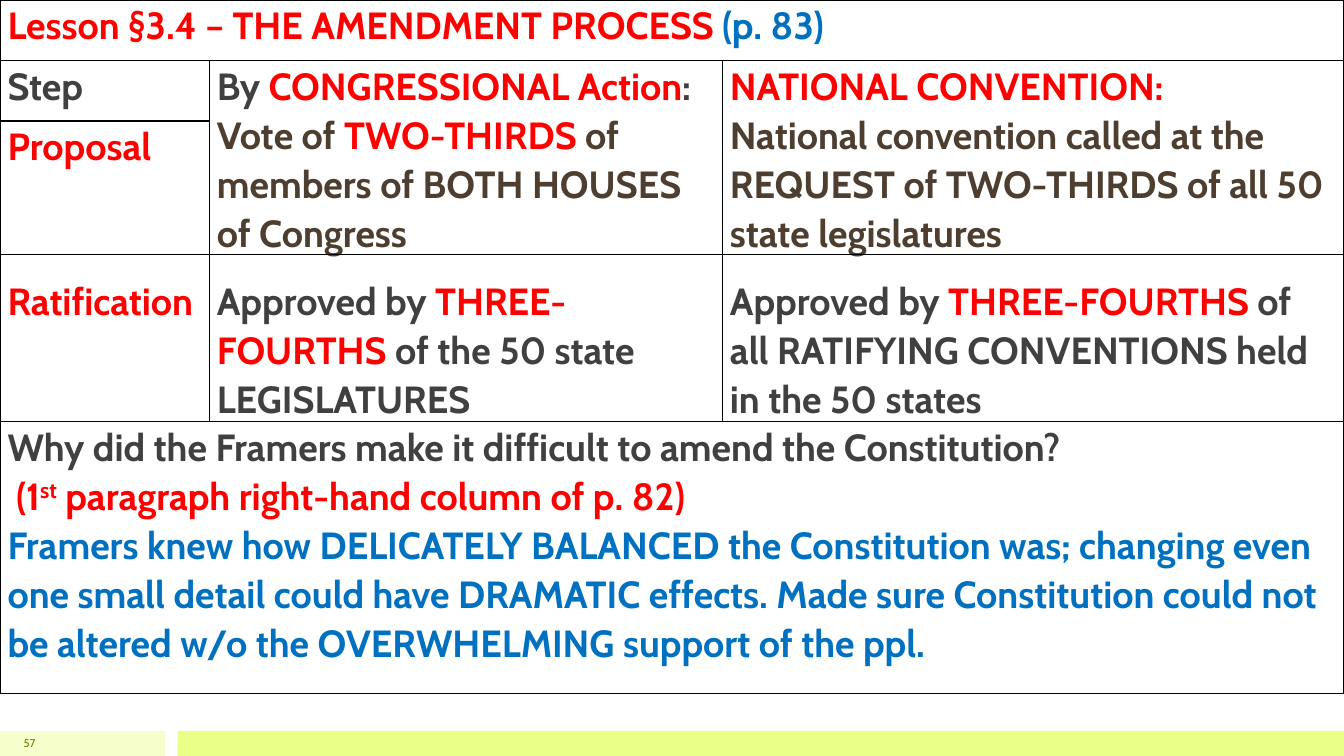
from dataclasses import dataclass

from lxml.etree import SubElement
from pptx import Presentation
from pptx.dml.color import RGBColor
from pptx.enum.shapes import MSO_SHAPE
from pptx.enum.text import MSO_ANCHOR, PP_ALIGN
from pptx.oxml.ns import qn
from pptx.util import Pt


@dataclass(frozen=True)
class Theme:
    font: str = "Cabin"
    table_size: float = 27
    number_size: float = 8
    line_spacing: float = 1.07
    red: str = "FF0000"
    blue: str = "0070C0"
    gray: str = "404040"
    brown: str = "4D3E2F"
    olive: str = "688000"
    pale_lime: str = "F6FFCC"
    lime: str = "E9FF88"
    border: str = "000000"


THEME = Theme()
RED, BLUE, GRAY, BROWN = THEME.red, THEME.blue, THEME.gray, THEME.brown

SLIDE_WIDTH, SLIDE_HEIGHT = 960, 540
FOOTER_TOP, FOOTER_HEIGHT = 522, 18
COLUMN_WIDTHS = [149.5, 366.5, 444]
ROW_HEIGHTS = [43.2, 43.2, 90, 114.5, 194.4]
MERGES = [((0, 0), (0, 2)), ((1, 1), (2, 1)), ((1, 2), (2, 2)), ((4, 0), (4, 2))]
RATIFICATION_ROW, RATIFICATION_GAP = 3, 15

# (row, column): paragraphs, each a list of (text, colour[, baseline]) runs
CELLS = {
    (0, 0): [[("Lesson §3.4 – THE AMENDMENT PROCESS ", RED), ("(p. 83)", BLUE)]],
    (1, 0): [[("Step", GRAY)]],
    (1, 1): [
        [("By ", GRAY), ("CONGRESSIONAL Action", RED), (":", GRAY)],
        [("Vote of ", BROWN), ("TWO-THIRDS ", RED),
         ("of members of BOTH HOUSES of Congress", BROWN)],
    ],
    (1, 2): [
        [("NATIONAL CONVENTION:", RED)],
        [("National convention called at the REQUEST of TWO-THIRDS "
          "of all 50 state legislatures", BROWN)],
    ],
    (2, 0): [[("Proposal", RED)]],
    (3, 0): [[("Ratification", RED)]],
    (3, 1): [[("Approved by ", GRAY), ("THREE-FOURTHS ", RED),
              ("of the 50 state LEGISLATURES", GRAY)]],
    (3, 2): [[("Approved by ", GRAY), ("THREE-FOURTHS ", RED),
              ("of all RATIFYING CONVENTIONS held in the 50 states", GRAY)]],
    (4, 0): [
        [("Why did the Framers make it difficult to amend the Constitution?", GRAY)],
        [(" (1", RED), ("st", RED, 30), (" paragraph right-hand column of p. 82)", RED)],
        [("Framers knew how DELICATELY BALANCED the Constitution was; changing even "
          "one small detail could have DRAMATIC effects. Made sure Constitution could "
          "not be altered w/o the OVERWHELMING support of the ppl.", BLUE)],
    ],
}


class SlideBuilder:
    def __init__(self, slide, theme):
        self.slide = slide
        self.theme = theme

    def add_run(self, paragraph, text, color, size, bold=False, baseline=0):
        """Add a styled run; baseline is the percentage it is raised by."""
        run = paragraph.add_run()
        run.text = text
        run.font.name = self.theme.font
        run.font.size = Pt(size)
        run.font.bold = bold
        run.font.color.rgb = RGBColor.from_string(color)
        if baseline:
            run._r.get_or_add_rPr().set("baseline", str(baseline * 1000))

    def add_bar(self, left, width, color):
        bar = self.slide.shapes.add_shape(
            MSO_SHAPE.RECTANGLE, Pt(left), Pt(FOOTER_TOP), Pt(width), Pt(FOOTER_HEIGHT))
        bar.shadow.inherit = False
        bar.fill.solid()
        bar.fill.fore_color.rgb = RGBColor.from_string(color)
        bar.line.fill.background()

    def add_page_number(self, text):
        box = self.slide.shapes.add_textbox(
            Pt(0), Pt(FOOTER_TOP), Pt(32.4), Pt(FOOTER_HEIGHT))
        frame = box.text_frame
        frame.word_wrap = True
        frame.vertical_anchor = MSO_ANCHOR.MIDDLE
        paragraph = frame.paragraphs[0]
        paragraph.alignment = PP_ALIGN.RIGHT
        self.add_run(paragraph, text, self.theme.olive, self.theme.number_size)

    def add_borders(self, cell):
        properties = cell._tc.get_or_add_tcPr()
        for position, side in enumerate(("lnL", "lnR", "lnT", "lnB")):
            line = SubElement(properties, qn(f"a:{side}"), w=str(Pt(1)))
            fill = SubElement(line, qn("a:solidFill"))
            SubElement(fill, qn("a:srgbClr"), val=self.theme.border)
            properties.insert(position, line)

    def fill_cell(self, cell, paragraphs):
        frame = cell.text_frame
        for index, runs in enumerate(paragraphs):
            paragraph = frame.add_paragraph() if index else frame.paragraphs[0]
            paragraph.line_spacing = self.theme.line_spacing
            for text, color, *baseline in runs:
                self.add_run(paragraph, text, color, self.theme.table_size, True, *baseline)

    def add_table(self):
        table = self.slide.shapes.add_table(
            len(ROW_HEIGHTS), len(COLUMN_WIDTHS), Pt(0), Pt(0),
            Pt(sum(COLUMN_WIDTHS)), Pt(sum(ROW_HEIGHTS))).table
        table.first_row = False
        table.horz_banding = False
        for column, width in zip(table.columns, COLUMN_WIDTHS):
            column.width = Pt(width)
        for row, height in zip(table.rows, ROW_HEIGHTS):
            row.height = Pt(height)
        for cell in table.iter_cells():
            cell.margin_left = cell.margin_right = Pt(5.4)
            cell.margin_top = cell.margin_bottom = Pt(0)
            cell.fill.background()
            self.add_borders(cell)
        for first, last in MERGES:
            table.cell(*first).merge(table.cell(*last))
        for (row, column), paragraphs in CELLS.items():
            cell = table.cell(row, column)
            if row == RATIFICATION_ROW:
                cell.margin_top = Pt(RATIFICATION_GAP)
            self.fill_cell(cell, paragraphs)


def main():
    presentation = Presentation()
    presentation.slide_width = Pt(SLIDE_WIDTH)
    presentation.slide_height = Pt(SLIDE_HEIGHT)
    blank_layout = presentation.slide_layouts[6]
    builder = SlideBuilder(presentation.slides.add_slide(blank_layout), THEME)
    builder.add_bar(0, 118, THEME.pale_lime)
    builder.add_bar(127, SLIDE_WIDTH - 127, THEME.lime)
    builder.add_page_number("57")
    builder.add_table()
    presentation.save("out.pptx")


if __name__ == "__main__":
    main()
